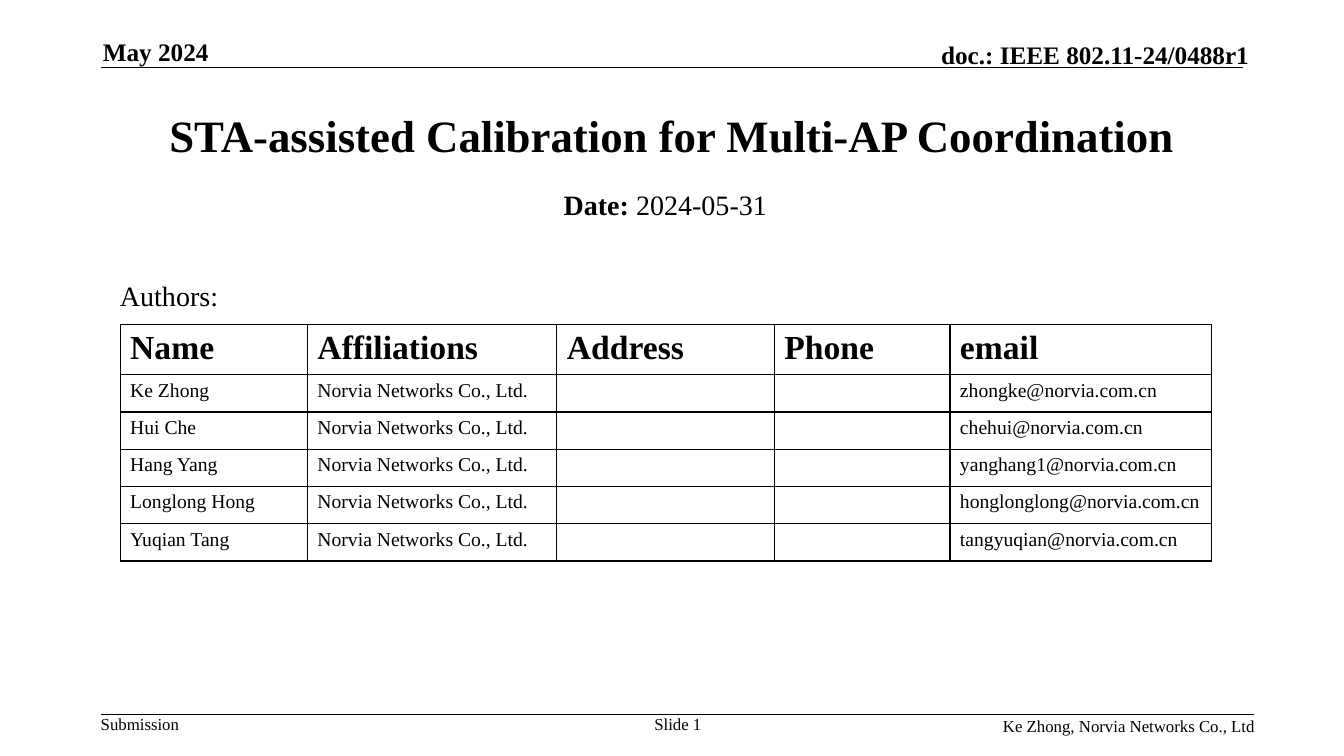
import dataclasses

import lxml.etree
import pptx
import pptx.dml.color
import pptx.enum.shapes
import pptx.enum.text
import pptx.oxml.ns
import pptx.util

ALIGN = pptx.enum.text.PP_ALIGN
ANCHOR = pptx.enum.text.MSO_ANCHOR
STRAIGHT = pptx.enum.shapes.MSO_CONNECTOR.STRAIGHT
COLS, ROWS = 160, 90


@dataclasses.dataclass(frozen=True)
class Theme:
    font: str = "Times New Roman"
    ink: str = "000000"
    title: int = 32
    head: int = 24
    body: int = 20
    page: int = 18
    cell: int = 14
    foot: int = 12
    rule: int = 1


def node(parent, tag, **attrs):
    return lxml.etree.SubElement(parent, pptx.oxml.ns.qn(tag), attrs)


def write(para, text, theme, size, bold=False):
    run = para.add_run()
    run.text = text
    font = run.font
    font.name = theme.font
    font.size = pptx.util.Pt(size)
    font.bold = bold
    font.color.rgb = pptx.dml.color.RGBColor.from_string(theme.ink)


class Page:
    def __init__(self, deck, theme):
        self.theme = theme
        self.wide, self.high = deck.slide_width, deck.slide_height
        self.slide = deck.slides.add_slide(deck.slide_layouts[6])

    def col(self, count):
        return round(self.wide * count / COLS)

    def row(self, count):
        return round(self.high * count / ROWS)

    def line(self, left, right, top):
        line = self.slide.shapes.add_connector(
            STRAIGHT, self.col(left), self.row(top), self.col(right), self.row(top))
        line.line.width = pptx.util.Pt(self.theme.rule)
        line.line.color.rgb = pptx.dml.color.RGBColor.from_string(self.theme.ink)
        node(line._element.spPr, "a:effectLst")

    def text(self, place, parts, size, align=ALIGN.LEFT, anchor=ANCHOR.TOP,
             inset=(0, 0), before=0, wrap=True):
        left, top, width, height = place
        box = self.slide.shapes.add_textbox(
            self.col(left), self.row(top), self.col(width), self.row(height))
        frame = box.text_frame
        frame.word_wrap = wrap
        frame.vertical_anchor = anchor
        frame.margin_left = frame.margin_right = pptx.util.Inches(inset[0])
        frame.margin_top = frame.margin_bottom = pptx.util.Inches(inset[1])
        para = frame.paragraphs[0]
        para.alignment = align
        para.space_before = pptx.util.Pt(before)
        for words, bold in parts:
            write(para, words, self.theme, size, bold=bold)

    def edge(self, cell):
        props = cell._tc.get_or_add_tcPr()
        for side in ("a:lnL", "a:lnR", "a:lnT", "a:lnB"):
            line = node(props, side, w=str(pptx.util.Pt(self.theme.rule)))
            node(node(line, "a:solidFill"), "a:srgbClr", val=self.theme.ink)
        cell.fill.background()

    def table(self, left, top, widths, heights, data):
        table = self.slide.shapes.add_table(
            len(heights), len(widths), self.col(left), self.row(top),
            self.col(sum(widths)), self.row(sum(heights))).table
        table.first_row = table.horz_banding = False
        for column, width in zip(table.columns, widths):
            column.width = self.col(width)
        for line, height in zip(table.rows, heights):
            line.height = self.row(height)
        for r, values in enumerate(data):
            size = self.theme.cell if r else self.theme.head
            for c, value in enumerate(values):
                cell = table.cell(r, c)
                self.edge(cell)
                para = cell.text_frame.paragraphs[0]
                if value:
                    write(para, value, self.theme, size, bold=r == 0)
                else:
                    node(para._p, "a:endParaRPr", sz=str(size * 100))


def main():
    deck = pptx.Presentation()
    deck.slide_width = pptx.util.Inches(13.33)
    deck.slide_height = pptx.util.Inches(7.5)
    theme = Theme()
    page = Page(deck, theme)
    pad = (0.1, 0.05)
    firm = "Norvia Networks Co., Ltd."

    page.line(12, 148, 8.04)
    page.text((12, 85, 9.5, 2.4), [("Submission", False)], theme.foot, wrap=False)
    page.line(12, 149.3, 85.05)
    page.text((87.5, 4.7, 61.2, 3.6), [("doc.: IEEE 802.11-24/0488r1", True)],
              theme.page, align=ALIGN.RIGHT, anchor=ANCHOR.BOTTOM)

    team = [("Ke Zhong", "zhongke"), ("Hui Che", "chehui"),
            ("Hang Yang", "yanghang1"), ("Longlong Hong", "honglonglong"),
            ("Yuqian Tang", "tangyuqian")]
    data = [("Name", "Affiliations", "Address", "Phone", "email")]
    data += [(name, firm, "", "", f"{user}@norvia.com.cn") for name, user in team]
    page.table(14.3, 38.6, (22.3, 29.7, 25.9, 20.9, 31.1),
               [4.7] + [4.44] * len(team), data)

    page.text((12, 8.8, 136, 14.5),
              [("STA-assisted Calibration for Multi-AP Coordination", True)],
              theme.title, align=ALIGN.CENTER, anchor=ANCHOR.MIDDLE, inset=pad)
    page.text((23.2, 21.7, 112, 6.2), [("Date:", True), (" 2024-05-31", False)],
              theme.body, align=ALIGN.CENTER, inset=pad, before=5)
    page.text((12.25, 4.3, 32.8, 3.6), [("May 2024", True)],
              theme.page, anchor=ANCHOR.BOTTOM)
    page.text((93.7, 85.2, 55.7, 2.4), [("Ke Zhong, " + firm.rstrip("."), False)],
              theme.foot, align=ALIGN.RIGHT)
    page.text((76.1, 85, 9.2, 4.8), [("Slide 1", False)],
              theme.foot, align=ALIGN.CENTER)
    page.text((13.1, 32.6, 19, 5), [("Authors:", False)],
              theme.body, inset=pad, before=5)

    deck.save("out.pptx")


if __name__ == "__main__":
    main()
